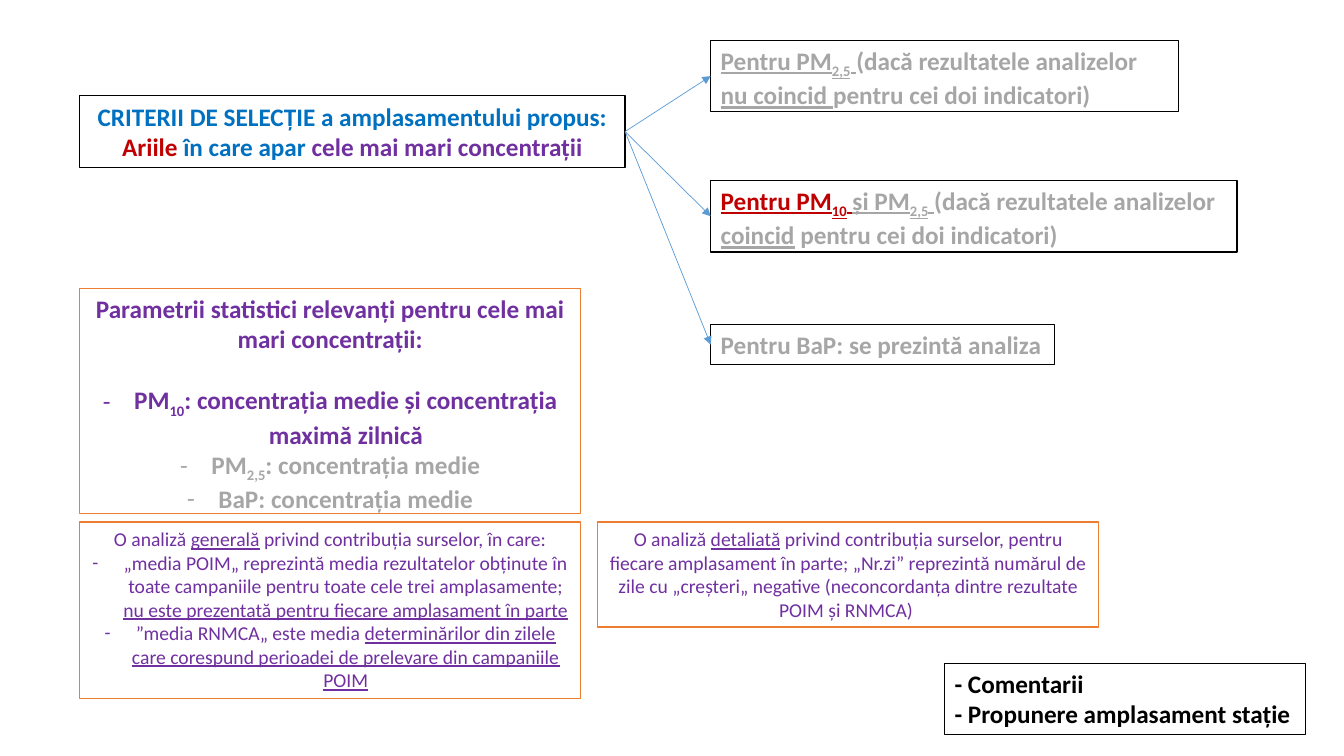
from dataclasses import dataclass
from typing import NamedTuple

import pptx
import pptx.util
import pptx.dml.color
import pptx.enum.shapes
import pptx.enum.text
import pptx.oxml.ns
from lxml import etree

ALIGN = pptx.enum.text.PP_ALIGN
FIT = pptx.enum.text.MSO_AUTO_SIZE


@dataclass(frozen=True)
class Theme:
    font: str = "Calibri"
    large: int = 18
    small: int = 14
    black: str = "000000"
    white: str = "FFFFFF"
    blue: str = "0070C0"
    red: str = "C00000"
    violet: str = "7030A0"
    gray: str = "A6A6A6"
    orange: str = "ED7D31"
    arrow: str = "5B9BD5"


T = Theme()
WIDTH, HEIGHT = pptx.util.Inches(13.33), pptx.util.Inches(7.5)
HANG = pptx.util.Inches(0.31)

# Shares of the slide, in percent
LEFT, FAN = 5.93, 52.88
SPAN = 37.28
LINE, PAIR = 5.33, 9.47
BASE = 69.07


class Run(NamedTuple):
    text: str
    color: str
    under: bool = False
    sub: bool = False


class Para(NamedTuple):
    runs: list[Run]
    dash: bool = False
    gap: float = 0


@dataclass
class Box:
    x: float
    y: float
    w: float
    h: float
    paras: list[Para]
    edge: str = T.black
    size: int = T.large
    bold: bool = True
    align: ALIGN = ALIGN.LEFT


def violet(text: str, under: bool = False, sub: bool = False) -> Run:
    return Run(text, T.violet, under, sub)


def gray(text: str, under: bool = False, sub: bool = False) -> Run:
    return Run(text, T.gray, under, sub)


def rgb(color: str) -> pptx.dml.color.RGBColor:
    return pptx.dml.color.RGBColor.from_string(color)


CRITERIA = Box(LEFT, 12.67, 40.58, PAIR, [
    Para([Run("CRITERII DE SELECȚIE a amplasamentului propus:", T.blue)]),
    Para([Run("Ariile", T.red), Run(" în care apar ", T.blue),
          violet("cele mai mari concentrații")]),
], align=ALIGN.CENTER)

PARAMS = Box(LEFT, 38.13, SPAN, 29.8, [
    Para([violet("Parametrii statistici relevanți pentru cele mai mari concentrații:")]),
    Para([violet("PM"), violet("10", sub=True),
          violet(": concentrația medie și concentrația maximă zilnică")],
         dash=True, gap=22),
    Para([gray("PM"), gray("2,5", sub=True), gray(": concentrația medie")], dash=True),
    Para([gray("BaP: concentrația medie")], dash=True),
], edge=T.orange, align=ALIGN.CENTER)

CASES = [
    Box(FAN, 5.33, 34.8, PAIR, [Para([
        gray("Pentru PM", True), gray("2,5", True, True), gray(" ", True),
        gray("(dacă rezultatele analizelor "), gray("nu coincid ", True),
        gray("pentru cei doi indicatori)")])]),
    Box(FAN, 23.87, 39.15, PAIR, [Para([
        Run("Pentru PM", T.red, True), Run("10", T.red, True, True),
        Run(" ", T.red, True), gray("și PM", True), gray("2,5", True, True),
        gray(" ", True), gray("(dacă rezultatele analizelor "),
        gray("coincid", True), gray(" pentru cei doi indicatori)")])]),
    Box(FAN, 42.93, 25.58, LINE, [Para([gray("Pentru BaP: se prezintă analiza")])]),
]

NOTES = [
    Box(LEFT, BASE, SPAN, 23.33, [
        Para([violet("O analiză "), violet("generală", True),
              violet(" privind contribuția surselor, în care:")]),
        Para([violet("„media POIM„ reprezintă media rezultatelor obținute în toate "
                     "campaniile pentru toate cele trei amplasamente; "),
              violet("nu este prezentată pentru fiecare amplasament în parte", True)],
             dash=True),
        Para([violet("”media RNMCA„ este media "),
              violet("determinărilor din zilele care corespund perioadei de "
                     "prelevare din campaniile POIM", True)], dash=True),
    ], T.orange, T.small, False, ALIGN.CENTER),
    Box(70.28, 87.73, 26.85, PAIR, [
        Para([Run("- Comentarii", T.black)]),
        Para([Run("- Propunere amplasament stație", T.black)])]),
    Box(44.48, BASE, SPAN, 13.87, [
        Para([violet("O analiză "), violet("detaliată", True),
              violet(" privind contribuția surselor, pentru fiecare amplasament în "
                     "parte; „Nr.zi” reprezintă numărul de zile cu „creșteri„ negative "
                     "(neconcordanța dintre rezultate POIM și RNMCA) ")]),
    ], T.orange, T.small, False, ALIGN.CENTER),
]


def bullet(par, dash: bool) -> None:
    """Give the paragraph a hanging dash, or clear its bullet."""
    props = par._p.get_or_add_pPr()
    props.set("marL", str(HANG if dash else 0))
    props.set("indent", str(-HANG if dash else 0))
    qn = pptx.oxml.ns.qn
    if dash:
        etree.SubElement(props, qn("a:buFont"), typeface=T.font)
        etree.SubElement(props, qn("a:buChar"), char="-")
    else:
        etree.SubElement(props, qn("a:buNone"))


def write(par, item: Para, box: Box) -> None:
    bullet(par, item.dash)
    par.alignment = box.align
    par.space_before = pptx.util.Pt(item.gap)
    par.font.name = T.font
    par.font.size = pptx.util.Pt(box.size)
    par.font.bold = box.bold
    for part in item.runs:
        run = par.add_run()
        run.text = part.text
        run.font.color.rgb = rgb(part.color)
        if part.under:
            run.font.underline = True
        if part.sub:
            run._r.get_or_add_rPr().set("baseline", "-25000")


def fill(shape, box: Box, fit: FIT = FIT.NONE):
    """Place, paint and letter a shape or placeholder."""
    shape.left, shape.width = (int(WIDTH * n / 100) for n in (box.x, box.w))
    shape.top, shape.height = (int(HEIGHT * n / 100) for n in (box.y, box.h))
    shape.fill.solid()
    shape.fill.fore_color.rgb = rgb(T.white)
    shape.line.color.rgb = rgb(box.edge)
    shape.line.width = pptx.util.Pt(1)
    frame = shape.text_frame
    frame.word_wrap = True
    frame.auto_size = fit
    frame.vertical_anchor = pptx.enum.text.MSO_ANCHOR.TOP
    for i, item in enumerate(box.paras):
        write(frame.add_paragraph() if i else frame.paragraphs[0], item, box)
    return shape


def draw(slide, box: Box):
    shape = slide.shapes.add_shape(
        pptx.enum.shapes.MSO_SHAPE.RECTANGLE, 0, 0, 0, 0)
    shape.shadow.inherit = False
    return fill(shape, box, FIT.SHAPE_TO_FIT_TEXT)


def link(slide, start, end) -> None:
    """Draw an arrow from the right of start to the left of end."""
    line = slide.shapes.add_connector(
        pptx.enum.shapes.MSO_CONNECTOR.STRAIGHT, 0, 0, 0, 0)
    line.begin_connect(start, 3)
    line.end_connect(end, 1)
    line.line.color.rgb = rgb(T.arrow)
    line.line.width = pptx.util.Pt(0.5)
    qn = pptx.oxml.ns.qn
    etree.SubElement(line.line._get_or_add_ln(), qn("a:tailEnd"), type="triangle")
    etree.SubElement(line._element.spPr, qn("a:effectLst"))


def main() -> None:
    deck = pptx.Presentation()
    deck.slide_width, deck.slide_height = WIDTH, HEIGHT
    slide = deck.slides.add_slide(deck.slide_layouts[1])
    title = fill(slide.shapes.title, CRITERIA)
    fill(slide.placeholders[1], PARAMS)
    for case in CASES:
        link(slide, title, draw(slide, case))
    for note in NOTES:
        draw(slide, note)
    deck.save("out.pptx")


if __name__ == "__main__":
    main()
